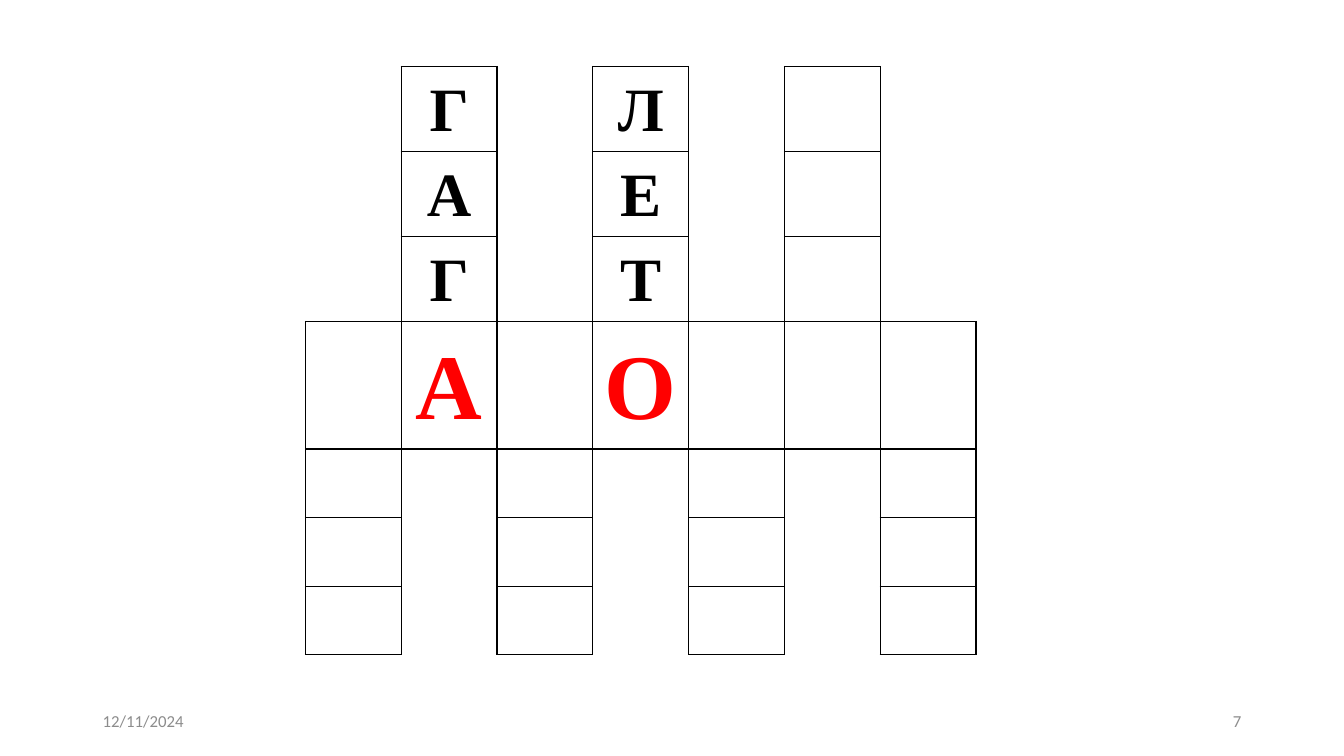
"""Build the crossword slide."""
import pptx
import pptx.util
import pptx.dml.color
import pptx.enum.text
import pptx.oxml
import pptx.oxml.ns

WIDE, HIGH = 13.33, 7.5
COLOR = {"ink": "000000", "key": "FF0000", "note": "8C8C8C"}
COLS = [0.95] * 7
ROWS = [0.78] * 3 + [1.17] + [0.68] * 3
KEY = 3
WORDS = {1: "ГАГА", 3: "ЛЕТО"}
PLAIN = "{2D5ABB26-0587-4C30-8999-92F81FD0307C}"
ALIGN = pptx.enum.text.PP_ALIGN
Inches = pptx.util.Inches


def style(para, face, size, color, align, bold=False):
    """Set the font and alignment of a paragraph."""
    para.alignment = align
    font = para.font
    font.name, font.size, font.bold = face, pptx.util.Pt(size), bold
    font.color.rgb = pptx.dml.color.RGBColor.from_string(COLOR[color])


def note(slide, left, text, align):
    """Add a small footer text at a share of the slide's width."""
    box = slide.shapes.add_textbox(
        Inches(left * WIDE), Inches(0.927 * HIGH), Inches(3), Inches(0.4))
    frame = box.text_frame
    frame.word_wrap = True
    frame.vertical_anchor = pptx.enum.text.MSO_ANCHOR.MIDDLE
    para = frame.paragraphs[0]
    para.text = text
    style(para, "Calibri", 12, "note", align)


def is_open(row, col):
    """Tell whether a cell is a square of the crossword."""
    return row == KEY or (row < KEY) == (col % 2 == 1)


def edges(row, col):
    """Name the sides of a cell that carry a line."""
    if is_open(row, col):
        return "LRTB"
    sides = {"L": col > 0, "R": col < len(COLS) - 1,
             "T": row > KEY, "B": row < KEY}
    return "".join(side for side in sides if sides[side])


def border(cell, sides):
    """Draw the named sides of a cell and clear the others."""
    props = cell._tc.get_or_add_tcPr()
    space = pptx.oxml.ns.nsdecls("a")
    ink = f'<a:solidFill><a:srgbClr val="{COLOR["ink"]}"/></a:solidFill>'
    for side in "LRTB":
        paint = ink if side in sides else "<a:noFill/>"
        props.append(pptx.oxml.parse_xml(
            f'<a:ln{side} {space} w="12700">{paint}</a:ln{side}>'))


def letter(cell, text, key):
    """Write one letter in a square."""
    cell.margin_left = cell.margin_right = Inches(0.07)
    cell.margin_top = cell.margin_bottom = 0
    para = cell.text_frame.paragraphs[0]
    para.text = text
    para.line_spacing = 1.15
    style(para, "Times New Roman", 66 if key else 44,
          "key" if key else "ink", ALIGN.CENTER, True)


def puzzle(slide):
    """Add the crossword table."""
    frame = slide.shapes.add_table(
        len(ROWS), len(COLS), Inches(3.03), Inches(0.66),
        Inches(sum(COLS)), Inches(sum(ROWS)))
    table = frame.table
    table.first_row = table.horz_banding = False
    table._tbl.tblPr.find(pptx.oxml.ns.qn("a:tableStyleId")).text = PLAIN
    for col, size in enumerate(COLS):
        table.columns[col].width = Inches(size)
    for row, size in enumerate(ROWS):
        table.rows[row].height = Inches(size)
        for col in range(len(COLS)):
            cell = table.cell(row, col)
            border(cell, edges(row, col))
            cell.fill.background()
            if row <= KEY and col in WORDS:
                letter(cell, WORDS[col][row], row == KEY)
    for col in range(len(COLS)):
        top = KEY + 1 if col % 2 else 0
        table.cell(top, col).merge(table.cell(top + 2, col))


def main():
    """Build and save the slide."""
    deck = pptx.Presentation()
    deck.slide_width, deck.slide_height = Inches(WIDE), Inches(HIGH)
    slide = deck.slides.add_slide(deck.slide_layouts[6])
    note(slide, 0.069, "12/11/2024", ALIGN.LEFT)
    note(slide, 0.706, "7", ALIGN.RIGHT)
    puzzle(slide)
    deck.save("out.pptx")


if __name__ == "__main__":
    main()
